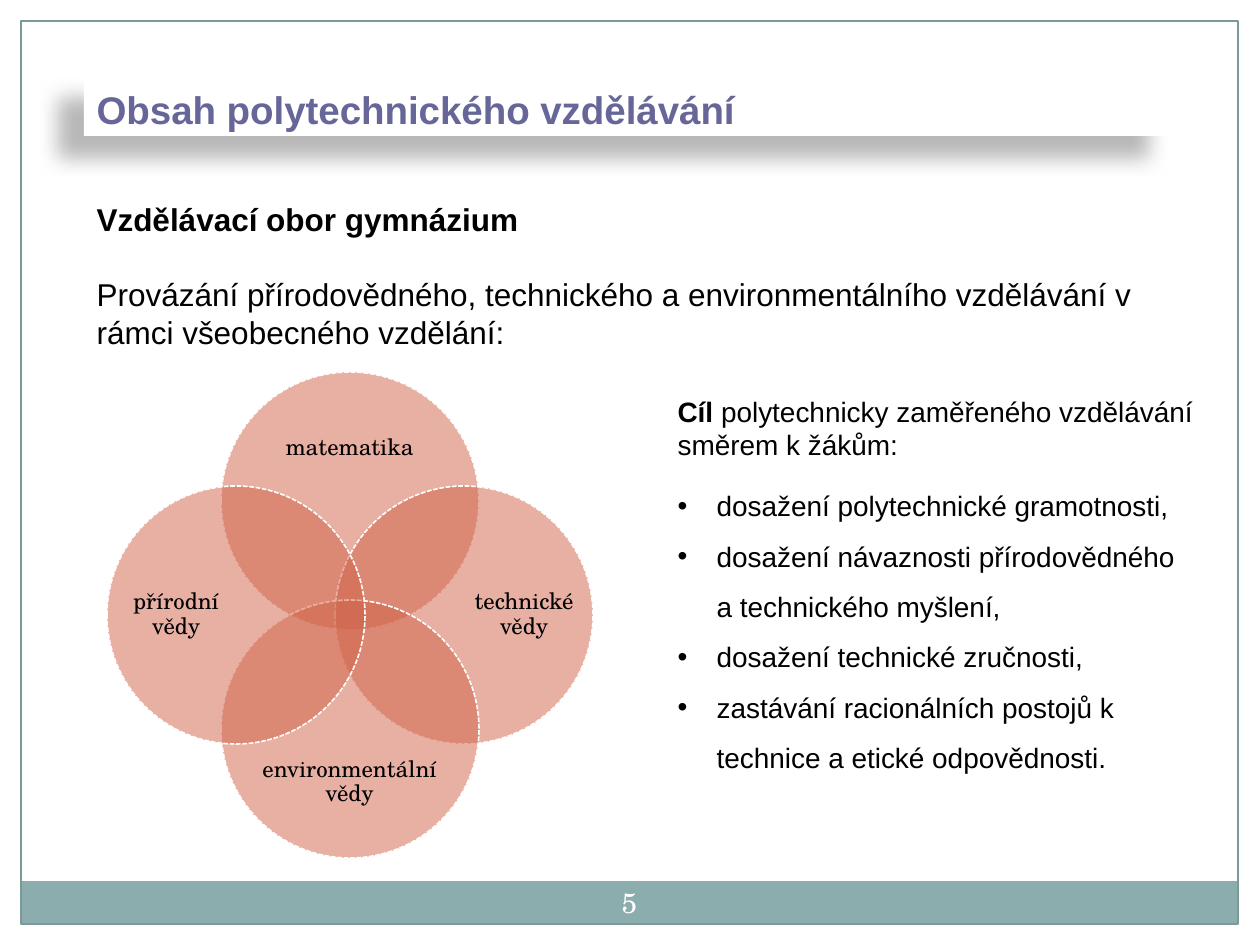
from lxml import etree
from pptx import Presentation
from pptx.dml.color import RGBColor
from pptx.enum.dml import MSO_LINE
from pptx.enum.shapes import MSO_SHAPE
from pptx.enum.text import MSO_ANCHOR, MSO_AUTO_SIZE, PP_ALIGN
from pptx.oxml.ns import qn
from pptx.util import Pt

RECTANGLE, OVAL = MSO_SHAPE.RECTANGLE, MSO_SHAPE.OVAL
TOP, MIDDLE = MSO_ANCHOR.TOP, MSO_ANCHOR.MIDDLE
LEFT, CENTER = PP_ALIGN.LEFT, PP_ALIGN.CENTER
DASH = MSO_LINE.SQUARE_DOT
NO_FIT = MSO_AUTO_SIZE.NONE

EMU_PER_PX = 914400 / 126
SANS, SERIF = "Arial", "TeX Gyre Schola"
COLORS = {
    "white": "FFFFFF",
    "black": "000000",
    "title": "666699",
    "band": "8CADAE",
    "frame": "7C999A",
    "circle": "D16349",
}


def px(length):
    return round(length * EMU_PER_PX)


def color(name):
    return RGBColor.from_string(COLORS[name])


def place(shape, box):
    shape.left, shape.top, shape.width, shape.height = map(px, box)


def set_up_text(frame, anchor=TOP, inset=None):
    frame.word_wrap = True
    frame.auto_size = NO_FIT
    frame.vertical_anchor = anchor
    if inset is not None:
        frame.margin_left = frame.margin_right = px(inset)
        frame.margin_top = frame.margin_bottom = px(inset)


def format_runs(paragraph, size, font=SANS, ink="black", bold=False):
    for run in paragraph.runs:
        run.font.size = Pt(size)
        run.font.name = font
        run.font.bold = bold
        run.font.color.rgb = color(ink)


def set_bullet(paragraph, character=None, indent=0):
    properties = paragraph._p.get_or_add_pPr()
    properties.set("marL", str(px(indent)))
    properties.set("indent", str(-px(indent)))
    if character:
        etree.SubElement(properties, qn("a:buFont"), typeface=SANS)
        etree.SubElement(properties, qn("a:buChar"), char=character)
    else:
        etree.SubElement(properties, qn("a:buNone"))


def add_plain_shape(shapes, kind, box):
    shape = shapes.add_shape(kind, *map(px, box))
    shape.shadow.inherit = False
    return shape


def add_label(shapes, box, text, size, ink, inset, line_spacing=1.0):
    label = shapes.add_textbox(*map(px, box))
    set_up_text(label.text_frame, MIDDLE, inset)
    label.text_frame.text = text
    paragraph = label.text_frame.paragraphs[0]
    paragraph.alignment = CENTER
    paragraph.line_spacing = line_spacing
    format_runs(paragraph, size, SERIF, ink)


def add_page_frame(slide, box, number):
    left, top, width, height = box
    band_height = 43
    band_top = top + height - band_height
    band = add_plain_shape(slide.shapes, RECTANGLE, (left, band_top, width, band_height))
    band.fill.solid()
    band.fill.fore_color.rgb = color("band")
    band.line.fill.background()
    frame = add_plain_shape(slide.shapes, RECTANGLE, box)
    frame.fill.background()
    frame.line.color.rgb = color("frame")
    frame.line.width = Pt(0.75)
    number_box = (left + (width - 84) / 2, band_top - 9, 84, 60)
    add_label(slide.shapes, number_box, number, 16, "white", 6)


def fill_title(title, box, text):
    place(title, box)
    title.fill.solid()
    title.fill.fore_color.rgb = color("white")
    title.shadow.inherit = False
    effects = title._element.spPr.find(qn("a:effectLst"))
    shadow = etree.SubElement(
        effects, qn("a:outerShdw"), blurRad=str(Pt(11.8)), dist=str(Pt(19.7)),
        dir=str(141 * 60000), algn="tr", rotWithShape="0")
    shade = etree.SubElement(shadow, qn("a:srgbClr"), val=COLORS["black"])
    etree.SubElement(shade, qn("a:alpha"), val="28000")
    set_up_text(title.text_frame)
    title.text_frame.margin_top = px(10)
    title.text_frame.text = text
    paragraph = title.text_frame.paragraphs[0]
    paragraph.alignment = LEFT
    format_runs(paragraph, 22, ink="title", bold=True)


def fill_intro(body, box, heading, text):
    place(body, box)
    frame = body.text_frame
    set_up_text(frame)
    frame.text = heading
    frame.add_paragraph().text = text
    for paragraph, bold, gap in zip(frame.paragraphs, (True, False), (0, 21)):
        paragraph.space_before = Pt(gap)
        set_bullet(paragraph)
        format_runs(paragraph, 18, bold=bold)


def fill_goals(body, box, keyword, lead, goals):
    place(body, box)
    frame = body.text_frame
    set_up_text(frame)
    frame.text = keyword
    heading = frame.paragraphs[0]
    heading.add_run().text = lead
    heading.space_before = Pt(0)
    heading.space_after = Pt(6)
    set_bullet(heading)
    format_runs(heading, 16)
    heading.runs[0].font.bold = True
    for goal in goals:
        paragraph = frame.add_paragraph()
        paragraph.text = goal
        paragraph.line_spacing = 1.5
        paragraph.space_before = Pt(0)
        set_bullet(paragraph, "•", 39)
        format_runs(paragraph, 16)


def add_circle_diagram(slide, box, top_text, right_text, bottom_text, left_text):
    left, top, size, _ = box
    diameter, step = 258, (size - 258) / 2
    wide, tall = (199, 82), (100, 199)
    petals = [
        (top_text, 1, 0, 29, 35, wide),
        (right_text, 2, 1, 139, 29, tall),
        (bottom_text, 1, 2, 29, 141, wide),
        (left_text, 0, 1, 19, 29, tall),
    ]
    group = slide.shapes.add_group_shape()
    for text, column, row, text_x, text_y, text_size in petals:
        x, y = left + column * step, top + row * step
        circle = add_plain_shape(group.shapes, OVAL, (x, y, diameter, diameter))
        circle.fill.solid()
        circle.fill.fore_color.rgb = color("circle")
        fill_color = circle._element.spPr.find(qn("a:solidFill"))[0]
        etree.SubElement(fill_color, qn("a:alpha"), val="50000")
        circle.line.color.rgb = color("white")
        circle.line.width = Pt(0.9)
        circle.line.dash_style = DASH
        label_box = (x + text_x, y + text_y, *text_size)
        add_label(group.shapes, label_box, text, 13, "black", 0, 0.9)


def main():
    presentation = Presentation()
    presentation.slide_width, presentation.slide_height = px(1260), px(945)
    slide = presentation.slides.add_slide(presentation.slide_layouts[3])
    title, intro, goals = slide.placeholders
    add_page_frame(slide, (21, 21, 1217, 903), "5")
    fill_title(title, (84, 76, 1091, 60), "Obsah polytechnického vzdělávání")
    fill_intro(
        intro, (84, 194, 1121, 165), "Vzdělávací obor gymnázium",
        "Provázání přírodovědného, technického a environmentálního vzdělávání "
        "v rámci všeobecného vzdělání:")
    add_circle_diagram(
        slide, (107, 372, 486, 486),
        "matematika", "technické vědy", "environmentální vědy", "přírodní vědy")
    fill_goals(
        goals, (665, 388, 545, 397), "Cíl ",
        "polytechnicky zaměřeného vzdělávání směrem k žákům:",
        ["dosažení polytechnické gramotnosti,",
         "dosažení návaznosti přírodovědného a technického myšlení,",
         "dosažení technické zručnosti,",
         "zastávání racionálních postojů k technice a etické odpovědnosti."])
    presentation.save("out.pptx")


if __name__ == "__main__":
    main()
